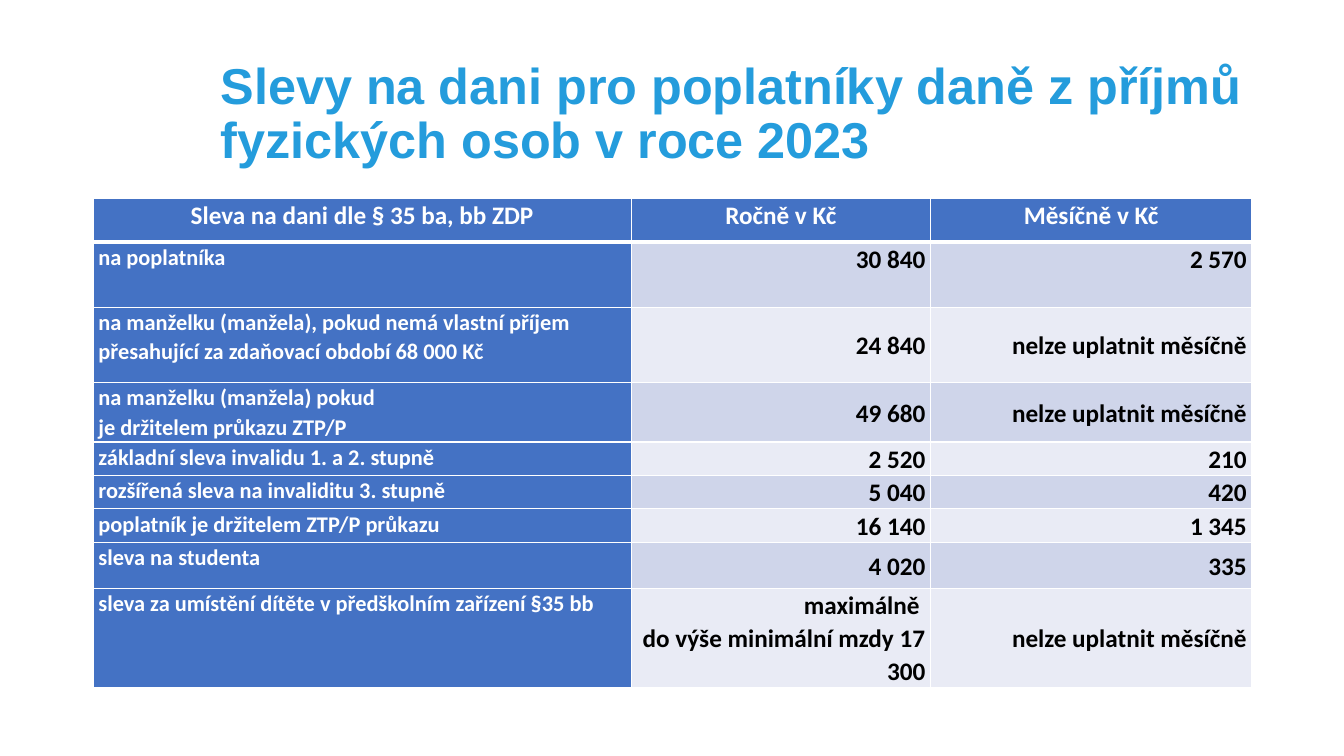
from dataclasses import dataclass

from lxml import etree
from pptx import Presentation, util as u
from pptx.dml.color import RGBColor
from pptx.enum import text
from pptx.oxml import ns


@dataclass(frozen=True)
class Theme:
    title_font: str = "Arial"
    table_font: str = "Calibri"
    title_size: int = 36
    value_size: int = 18
    label_size: int = 16
    title: str = "249CDC"
    accent: str = "4472C4"
    bands: tuple = ("CFD5EA", "E9EBF5")
    light: str = "FFFFFF"
    dark: str = "000000"


THEME = Theme()
LEFT, CENTER, RIGHT = text.PP_ALIGN.LEFT, text.PP_ALIGN.CENTER, text.PP_ALIGN.RIGHT
TOP, MIDDLE = text.MSO_ANCHOR.TOP, text.MSO_ANCHOR.MIDDLE

TITLE = "Slevy na dani pro poplatníky daně z příjmů fyzických osob v roce 2023"
NOT_MONTHLY = "nelze uplatnit měsíčně"
HEADER = ("Sleva na dani dle § 35 ba, bb ZDP", "Ročně v Kč", "Měsíčně v Kč")
HEADER_HEIGHT = 1.09
COLUMN_WIDTHS = (13.56, 7.54, 8.1)

# Row height in cm, label, yearly amount, monthly amount
DISCOUNTS = (
    (1.64, "na poplatníka", "30 840", "2 570"),
    (1.9, "na manželku (manžela), pokud nemá vlastní příjem přesahující "
          "za zdaňovací období 68 000 Kč", "24 840", NOT_MONTHLY),
    (1.5, "na manželku (manžela) pokud \vje držitelem průkazu ZTP/P", "49 680", NOT_MONTHLY),
    (0.84, "základní sleva invalidu 1. a 2. stupně", "2 520", "210"),
    (0.84, "rozšířená sleva na invaliditu 3. stupně", "5 040", "420"),
    (0.84, "poplatník je držitelem ZTP/P průkazu", "16 140", "1 345"),
    (1.17, "sleva na studenta", "4 020", "335"),
    (2.5, "sleva za umístění dítěte v předškolním zařízení §35 bb",
     "maximálně \ndo výše minimální mzdy 17 300", NOT_MONTHLY),
)


def write(frame, content, font, size, color, align=LEFT, spacing=1.07):
    """Write bold text; \\n starts a paragraph and \\v a new line."""
    for index, block in enumerate(content.split("\n")):
        paragraph = frame.add_paragraph() if index else frame.paragraphs[0]
        paragraph.alignment = align
        paragraph.line_spacing = spacing
        for number, line in enumerate(block.split("\v")):
            if number:
                paragraph.add_line_break()
            run = paragraph.add_run()
            run.text = line
            run.font.name = font
            run.font.size = u.Pt(size)
            run.font.bold = True
            run.font.color.rgb = RGBColor.from_string(color)


def add_title(slide, left, top, width, height):
    frame = slide.shapes.add_textbox(left, top, width, height).text_frame
    frame.word_wrap = True
    frame.vertical_anchor = MIDDLE
    write(frame, TITLE, THEME.title_font, THEME.title_size, THEME.title, spacing=0.9)


def set_borders(cell, **widths):
    """Draw light borders, given in points by side: L, R, T, B."""
    properties = cell._tc.get_or_add_tcPr()
    for side in "LRTB":
        line = etree.SubElement(properties, ns.qn(f"a:ln{side}"),
                                w=str(u.Pt(widths.get(side, 1))))
        fill = etree.SubElement(line, ns.qn("a:solidFill"))
        etree.SubElement(fill, ns.qn("a:srgbClr"), val=THEME.light)


def fill_cell(cell, content, fill, size, color, align, anchor, **borders):
    set_borders(cell, **borders)
    cell.fill.solid()
    cell.fill.fore_color.rgb = RGBColor.from_string(fill)
    cell.margin_left = cell.margin_right = u.Cm(0.13)
    cell.margin_top = cell.margin_bottom = 0
    cell.vertical_anchor = anchor
    write(cell.text_frame, content, THEME.table_font, size, color, align)


def add_discount_table(slide, left, top, width, height):
    table = slide.shapes.add_table(len(DISCOUNTS) + 1, len(HEADER),
                                   left, top, width, height).table
    table.horz_banding = False
    for column, column_width in zip(table.columns, COLUMN_WIDTHS):
        column.width = u.Cm(column_width)

    table.rows[0].height = u.Cm(HEADER_HEIGHT)
    for column, heading in enumerate(HEADER):
        fill_cell(table.cell(0, column), heading, THEME.accent, THEME.value_size,
                  THEME.light, CENTER, TOP, B=3)

    for row, (row_height, label, *amounts) in enumerate(DISCOUNTS, start=1):
        table.rows[row].height = u.Cm(row_height)
        top_border = 3 if row == 1 else 1
        fill_cell(table.cell(row, 0), label, THEME.accent, THEME.label_size,
                  THEME.light, LEFT, TOP, T=top_border)
        for column, amount in enumerate(amounts, start=1):
            fill_cell(table.cell(row, column), amount, THEME.bands[(row - 1) % 2],
                      THEME.value_size, THEME.dark, RIGHT,
                      TOP if row == 1 else MIDDLE, T=top_border)


def main():
    presentation = Presentation()
    presentation.slide_width, presentation.slide_height = u.Cm(33.87), u.Cm(19.05)
    slide = presentation.slides.add_slide(presentation.slide_layouts[6])
    add_title(slide, u.Cm(5.31), u.Cm(1.07), u.Cm(29.2), u.Cm(3.68))
    table_height = HEADER_HEIGHT + sum(discount[0] for discount in DISCOUNTS)
    add_discount_table(slide, u.Cm(2.35), u.Cm(5.01),
                       u.Cm(sum(COLUMN_WIDTHS)), u.Cm(table_height))
    presentation.save("out.pptx")


if __name__ == "__main__":
    main()
